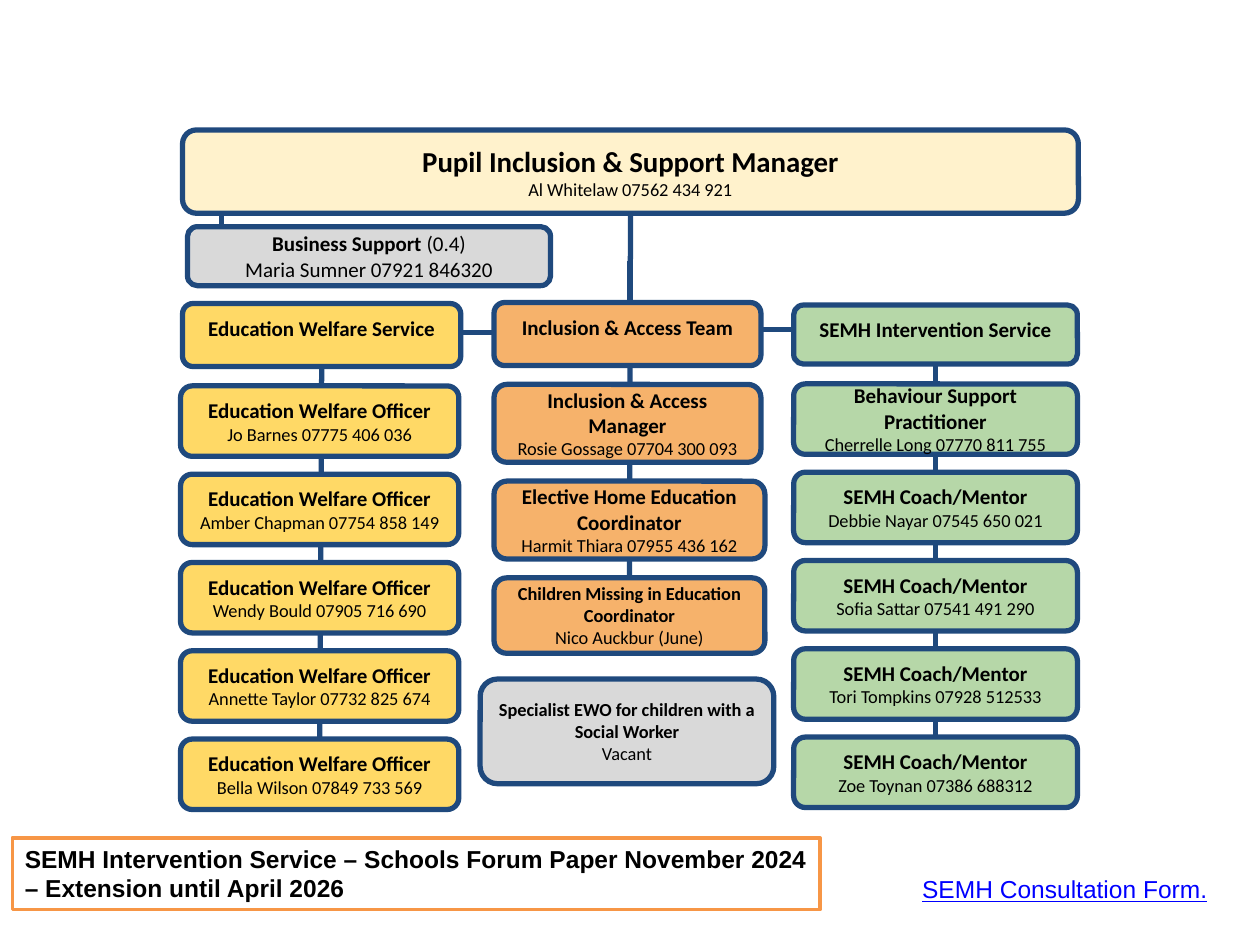
import pptx
import pptx.dml.color
import pptx.enum.shapes
import pptx.enum.text
import pptx.oxml.ns
import pptx.util
from lxml import etree

Cm = pptx.util.Cm
Pt = pptx.util.Pt
RGBColor = pptx.dml.color.RGBColor
SHAPE = pptx.enum.shapes.MSO_SHAPE
CONNECTOR = pptx.enum.shapes.MSO_CONNECTOR
ANCHOR = pptx.enum.text.MSO_ANCHOR
ALIGN = pptx.enum.text.PP_ALIGN
qn = pptx.oxml.ns.qn

NAVY = RGBColor(0x1F, 0x49, 0x7D)
CREAM = RGBColor(0xFF, 0xF2, 0xCC)
GREY = RGBColor(0xD9, 0xD9, 0xD9)
YELLOW = RGBColor(0xFF, 0xD9, 0x66)
ORANGE = RGBColor(0xF6, 0xB2, 0x6B)
GREEN = RGBColor(0xB6, 0xD7, 0xA8)
BORDER = RGBColor(0xF7, 0x96, 0x46)
WHITE = RGBColor(0xFF, 0xFF, 0xFF)
BLACK = RGBColor(0, 0, 0)
BLUE = RGBColor(0, 0, 0xFF)

OFFICERS = [
    "Jo Barnes 07775 406 036",
    "Amber Chapman 07754 858 149",
    "Wendy Bould 07905 716 690",
    "Annette Taylor 07732 825 674",
    "Bella Wilson 07849 733 569",
]
ACCESS = [
    ("Inclusion & Access Manager", "Rosie Gossage 07704 300 093", 12, 5.38, 1.57),
    ("Elective Home Education Coordinator", "Harmit Thiara 07955 436 162", 12, 5.46, 1.57),
    ("Children Missing in Education Coordinator", "Nico Auckbur (June)", 10.5, 5.46, 1.52),
]
SEMH = [
    ("Behaviour Support Practitioner", "Cherrelle Long 07770 811 755"),
    ("SEMH Coach/Mentor", "Debbie Nayar 07545 650 021"),
    ("SEMH Coach/Mentor", "Sofia Sattar 07541 491 290"),
    ("SEMH Coach/Mentor", "Tori Tompkins 07928 512533"),
    ("SEMH Coach/Mentor", "Zoe Toynan 07386 688312"),
]


class OrgChart:
    font = "Calibri"
    footer_font = "Arial"
    line_width = Pt(3)
    inset = Cm(0.18)

    def __init__(self, s):
        self.s = s

    def connector(self, kind, x1=0, y1=0, x2=0, y2=0):
        sp = self.s.shapes.add_connector(kind, Cm(x1), Cm(y1), Cm(x2), Cm(y2))
        sp.line.color.rgb = NAVY
        sp.line.width = self.line_width
        pr = sp._element.spPr
        etree.SubElement(pr, qn("a:effectLst"))
        if kind == CONNECTOR.ELBOW:
            av = pr.find(qn("a:prstGeom")).find(qn("a:avLst"))
            etree.SubElement(av, qn("a:gd"), name="adj1", fmla="val 0")
        return sp

    def run(self, p, text, size, font, bold=False, color=BLACK):
        r = p.add_run()
        r.text = text
        r.font.name = font
        r.font.size = Pt(size)
        r.font.bold = bold
        r.font.color.rgb = color
        return r

    def shape(self, kind, x, y, w, h, fill, line, width):
        sp = self.s.shapes.add_shape(kind, Cm(x), Cm(y), Cm(w), Cm(h))
        sp.shadow.inherit = False
        sp.fill.solid()
        sp.fill.fore_color.rgb = fill
        sp.line.color.rgb = line
        sp.line.width = width
        sp.text_frame.word_wrap = True
        return sp

    def box(self, x, y, w, h, fill, lines, anchor=ANCHOR.MIDDLE):
        sp = self.shape(SHAPE.ROUNDED_RECTANGLE, x, y, w, h, fill, NAVY, self.line_width)
        tf = sp.text_frame
        tf.vertical_anchor = anchor
        tf.margin_left = tf.margin_right = tf.margin_top = tf.margin_bottom = self.inset
        for i, runs in enumerate(lines):
            p = tf.add_paragraph() if i else tf.paragraphs[0]
            p.alignment = ALIGN.CENTER
            for text, size, bold in runs:
                self.run(p, text, size, self.font, bold)
        return sp

    def post(self, x, y, w, h, fill, role, person, size=12):
        return self.box(x, y, w, h, fill, [[(role, size, True)], [(person, 10.5, False)]])

    def heading(self, x, y, w, h, fill, text):
        return self.box(x, y, w, h, fill, [[(text, 12, True)]], ANCHOR.TOP)

    def notice(self, x, y, w, h, text):
        sp = self.shape(SHAPE.RECTANGLE, x, y, w, h, WHITE, BORDER, Pt(2))
        tf = sp.text_frame
        tf.vertical_anchor = ANCHOR.TOP
        p = tf.paragraphs[0]
        p.alignment = ALIGN.LEFT
        self.run(p, text, 14, self.footer_font, True)

    def link_text(self, x, y, w, h, text):
        sp = self.s.shapes.add_textbox(Cm(x), Cm(y), Cm(w), Cm(h))
        tf = sp.text_frame
        tf.word_wrap = True
        r = self.run(tf.paragraphs[0], text, 14, self.footer_font, color=BLUE)
        r.font.underline = True


def main():
    prs = pptx.Presentation()
    prs.slide_width = Cm(25.4)
    prs.slide_height = Cm(19.05)
    chart = OrgChart(prs.slides.add_slide(prs.slide_layouts[6]))

    chart.connector(CONNECTOR.ELBOW, 12.7, 5.33, 6.53, 6.71)
    chart.connector(CONNECTOR.ELBOW, 12.7, 5.26, 18.87, 6.65)
    chart.connector(CONNECTOR.ELBOW, 4.47, 3.71, 6.38, 5.46)
    trunks = [chart.connector(CONNECTOR.STRAIGHT) for _ in range(3)]

    manager = chart.post(3.68, 2.62, 18.06, 1.68, CREAM, "Pupil Inclusion & Support Manager",
                         "Al Whitelaw 07562 434 921", 16.5)
    welfare = chart.heading(3.68, 6.12, 5.61, 1.27, YELLOW, "Education Welfare Service")
    chart.heading(9.96, 6.1, 5.38, 1.27, ORANGE, "Inclusion & Access Team")
    semh = chart.heading(16, 6.15, 5.72, 1.19, GREEN, "SEMH Intervention Service")

    pitch = 1.78
    for i, person in enumerate(OFFICERS):
        officer = chart.post(3.64, 7.78 + i * pitch, 5.61, 1.42, YELLOW,
                             "Education Welfare Officer", person)
    for i, (role, person, size, w, h) in enumerate(ACCESS):
        access = chart.post(9.96, 7.75 + i * 1.95, w, h, ORANGE, role, person, size)
    for i, (role, person) in enumerate(SEMH):
        coach = chart.post(16, 7.74 + i * pitch, 5.72, 1.42, GREEN, role, person)

    for trunk, top, bottom in zip(trunks, (manager, semh, welfare), (access, coach, officer)):
        trunk.begin_connect(top, 2)
        trunk.end_connect(bottom, 0)

    chart.box(3.78, 4.57, 7.32, 1.19, GREY, [
        [("Business Support ", 12, True), ("(0.4)", 12, False)],
        [("Maria Sumner 07921 846320", 12, False)],
    ])
    chart.post(9.68, 13.69, 5.92, 2.11, GREY,
               "Specialist EWO for children with a Social Worker", "Vacant", 10.5)

    chart.notice(0.25, 16.89, 16.28, 1.45,
                 "SEMH Intervention Service – Schools Forum Paper November 2024 "
                 "– Extension until April 2026")
    chart.link_text(18.34, 17.5, 6.73, 0.86, "SEMH Consultation Form.")

    prs.save("out.pptx")


if __name__ == "__main__":
    main()
